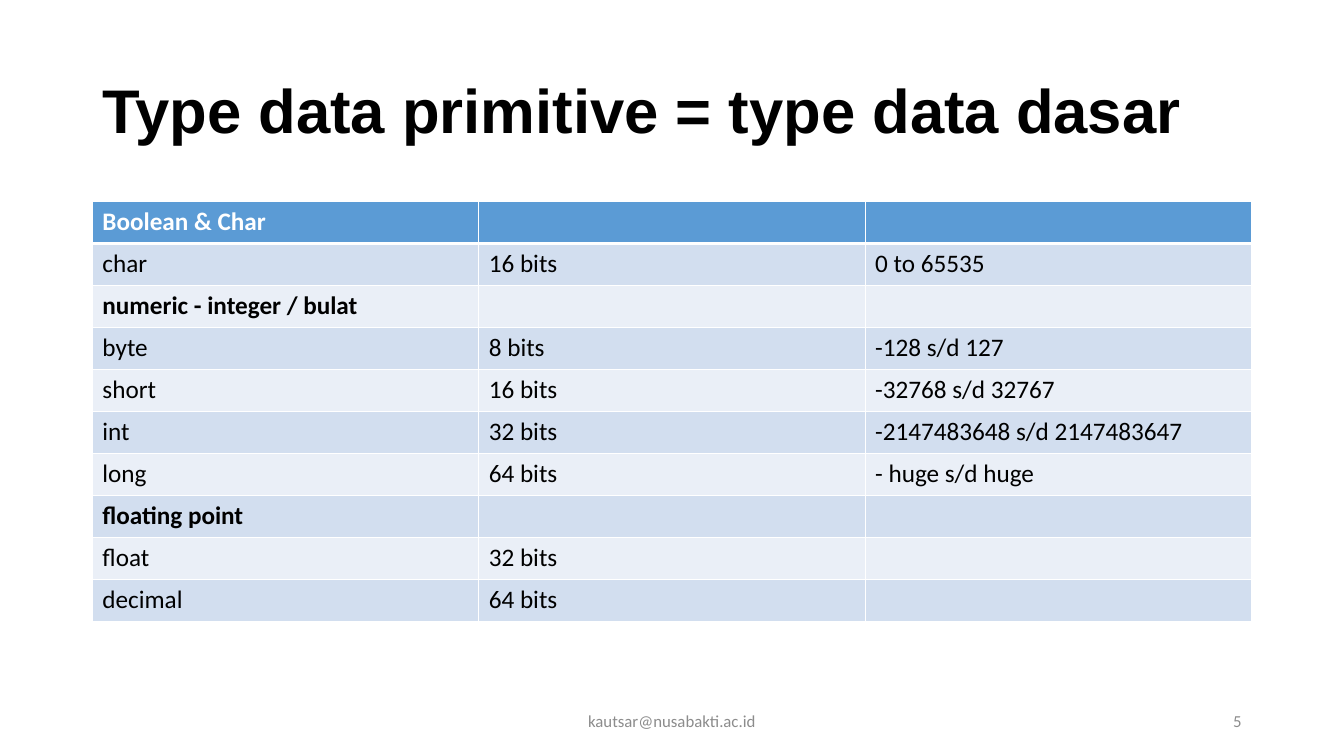
from lxml import etree
from pptx import Presentation
from pptx.dml.color import RGBColor
from pptx.enum.text import MSO_ANCHOR, PP_ALIGN
from pptx.oxml.ns import qn
from pptx.util import Pt

LEFT, MID, RIGHT = PP_ALIGN.LEFT, PP_ALIGN.CENTER, PP_ALIGN.RIGHT
CENTER = MSO_ANCHOR.MIDDLE
COLORS = {"ink": "000000", "white": "FFFFFF", "gray": "8C8C8C",
          "head": "5B9BD5", "odd": "D2DEEF", "even": "EAEFF7"}
TITLE = "Type data primitive = type data dasar"
ROWS = [
    ("Boolean & Char", "", ""),
    ("char", "16 bits", "0 to 65535"),
    ("numeric - integer / bulat", "", ""),
    ("byte", "8 bits", "-128 s/d 127"),
    ("short", "16 bits", "-32768 s/d 32767"),
    ("int", "32 bits", "-2147483648 s/d 2147483647"),
    ("long", "64 bits", "- huge s/d huge"),
    ("floating point", "", ""),
    ("float", "32 bits", ""),
    ("decimal", "64 bits", ""),
]


def color(name):
    """Return the named colour."""
    return RGBColor.from_string(COLORS[name])


def write(frame, text, size=18, font="Calibri", ink="ink", bold=False,
          align=LEFT, space=None):
    """Put one formatted line of text in a frame."""
    para = frame.paragraphs[0]
    para.alignment = align
    para.line_spacing = space
    run = para.add_run()
    run.text = text
    run.font.size = Pt(size)
    run.font.name = font
    run.font.bold = bold
    run.font.color.rgb = color(ink)


def place(shape, box):
    """Move a shape to a box given in points."""
    shape.left, shape.top, shape.width, shape.height = map(Pt, box)


def head(slide, box):
    """Fill the title placeholder."""
    title = slide.shapes.title
    place(title, box)
    title.text_frame.word_wrap = True
    title.text_frame.vertical_anchor = CENTER
    write(title.text_frame, TITLE, size=44, font="Arial", bold=True, space=0.9)


def edge(cell, side, width):
    """Draw a white border on one side of a cell."""
    props = cell._tc.get_or_add_tcPr()
    line = etree.SubElement(props, qn("a:ln" + side), w=str(Pt(width)))
    fill = etree.SubElement(line, qn("a:solidFill"))
    etree.SubElement(fill, qn("a:srgbClr"), val=COLORS["white"])


def grid(slide, box):
    """Build the table of data types."""
    cols = len(ROWS[0])
    table = slide.shapes.add_table(len(ROWS), cols, *map(Pt, box)).table
    for col in table.columns:
        col.width = Pt(box[2] / cols)
    for i, row in enumerate(ROWS):
        table.rows[i].height = Pt(box[3] / len(ROWS))
        tone = "head" if i == 0 else "odd" if i % 2 else "even"
        for j, text in enumerate(row):
            cell = table.cell(i, j)
            for side in "LRTB":
                thick = (i == 0 and side == "B") or (i == 1 and side == "T")
                edge(cell, side, 3 if thick else 1)
            cell.fill.solid()
            cell.fill.fore_color.rgb = color(tone)
            if text:
                write(cell.text_frame, text, bold=not row[1],
                      ink="ink" if i else "white")


def note(slide, box, text, align):
    """Add a small gray line at the foot."""
    frame = slide.shapes.add_textbox(*map(Pt, box)).text_frame
    frame.word_wrap = True
    frame.vertical_anchor = CENTER
    write(frame, text, size=12, ink="gray", align=align)


def main():
    """Build and save the slide."""
    deck = Presentation()
    deck.slide_width, deck.slide_height = Pt(960), Pt(540)
    slide = deck.slides.add_slide(deck.slide_layouts[5])
    head(slide, (66, 28.75, 828, 104.4))
    grid(slide, (66, 144, 828, 300))
    note(slide, (318, 500.5, 324, 28.75), "kautsar@nusabakti.ac.id", MID)
    note(slide, (678, 500.5, 216, 28.75), "5", RIGHT)
    deck.save("out.pptx")


if __name__ == "__main__":
    main()
